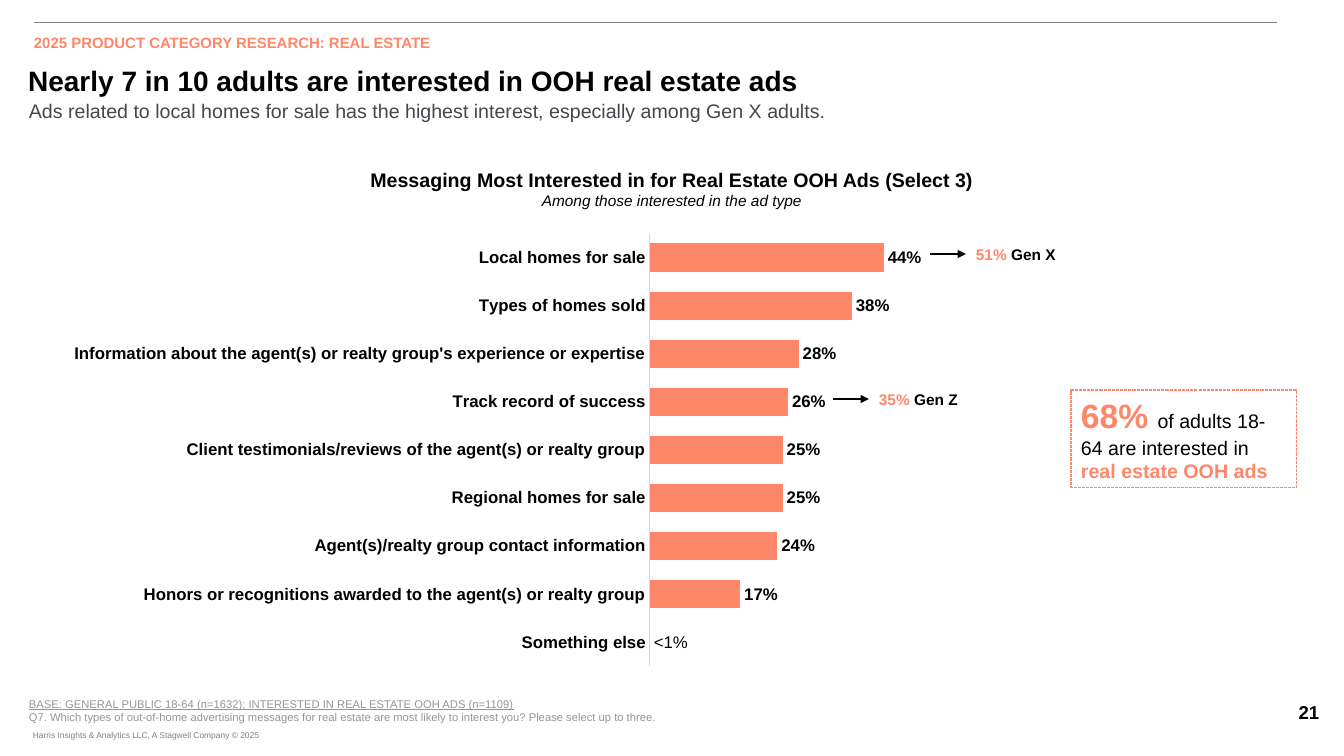
import pptx
import pptx.chart.data
import pptx.dml.color
import pptx.enum.chart
import pptx.enum.dml
import pptx.enum.shapes
import pptx.enum.text
import pptx.oxml
import pptx.oxml.ns
import pptx.util

RGB = pptx.dml.color.RGBColor
CORAL = RGB(0xFF, 0x87, 0x69)
BLACK = RGB(0, 0, 0)
SLATE = RGB(0x44, 0x47, 0x4E)
GRAY = RGB(0x80, 0x80, 0x80)
NOTE = RGB(0x93, 0x95, 0x98)
PALE = RGB(0xD9, 0xD9, 0xD9)
ALIGN = pptx.enum.text.PP_ALIGN
ANCHOR = pptx.enum.text.MSO_ANCHOR

STYLES = {
    "kicker": dict(size=10.7, color=CORAL, bold=True),
    "title": dict(size=20, color=BLACK, bold=True),
    "lead": dict(size=14, color=SLATE),
    "head": dict(size=14, color=BLACK, bold=True),
    "sub": dict(size=11, color=BLACK, italic=True),
    "base": dict(size=8, color=NOTE, underline=True),
    "query": dict(size=8, color=NOTE),
    "legal": dict(size=6, color=GRAY),
    "page": dict(size=13.3, color=BLACK, bold=True),
    "share": dict(size=11, color=CORAL, bold=True),
    "group": dict(size=11, color=BLACK, bold=True),
    "big": dict(size=24, color=CORAL, bold=True),
    "plain": dict(size=14, color=BLACK, bold=False),
    "strong": dict(size=14, color=CORAL, bold=True),
    "label": dict(size=12, color=BLACK, bold=True),
    "light": dict(size=12, color=BLACK, bold=False),
}

TITLE = [[("Nearly 7 in 10 adults are interested in OOH real estate ads", "title")]]
TEXTS = [
    ((24, 29, 672, 28), ALIGN.LEFT,
     [[("2025 PRODUCT CATEGORY RESEARCH: REAL ESTATE", "kicker")]]),
    ((19, 94, 1257, 41), ALIGN.LEFT,
     [[("Ads related to local homes for sale has the highest interest, "
        "especially among Gen X adults.", "lead")]]),
    ((294, 163, 756, 54), ALIGN.CENTER,
     [[("Messaging Most Interested in for Real Estate OOH Ads (Select 3)", "head")],
      [("Among those interested in the ad type", "sub")]]),
    ((19, 692, 1174, 38), ALIGN.LEFT,
     [[("BASE: GENERAL PUBLIC 18-64 (n=1632); "
        "INTERESTED IN REAL ESTATE OOH ADS (n=1109)", "base")],
      [("Q7. Which types of out-of-home advertising messages for real estate "
        "are most likely to interest you? Please select up to three.", "query")]]),
    ((23, 725, 260, 20), ALIGN.LEFT,
     [[("Harris Insights & Analytics LLC, A Stagwell Company © 2025", "legal")]]),
    ((1274, 696, 70, 33), ALIGN.CENTER, [[("21", "page")]]),
]
CALLS = [(930, 254, "51% ", "Gen X"), (833, 399, "35% ", "Gen Z")]
STAT = [[("68% ", "big"), ("of adults 18-64 are interested in ", "plain"),
         ("real estate OOH ads", "strong")]]
BARS = {
    "Local homes for sale": 0.44,
    "Types of homes sold": 0.38,
    "Information about the agent(s) or realty group's experience or expertise": 0.28,
    "Track record of success": 0.26,
    "Client testimonials/reviews of the agent(s) or realty group": 0.25,
    "Regional homes for sale": 0.25,
    "Agent(s)/realty group contact information": 0.24,
    "Honors or recognitions awarded to the agent(s) or realty group": 0.17,
    "Something else": 0,
}
PLOT = dict(layoutTarget="inner", xMode="edge", yMode="edge",
            x=0.512, y=0, w=0.488, h=1)


def px(*nums):
    return [round(n * 914400 / 100.8) for n in nums]


def style(font, name):
    font.name = "Arial"
    for key, val in STYLES[name].items():
        if key == "color":
            font.color.rgb = val
        else:
            setattr(font, key, pptx.util.Pt(val) if key == "size" else val)


def write(frame, paras, align=ALIGN.LEFT, anchor=ANCHOR.TOP):
    frame.word_wrap = True
    frame.auto_size = pptx.enum.text.MSO_AUTO_SIZE.NONE
    frame.vertical_anchor = anchor
    for num, runs in enumerate(paras):
        para = frame.add_paragraph() if num else frame.paragraphs[0]
        para.alignment = align
        for text, name in runs:
            run = para.add_run()
            run.text = text
            style(run.font, name)


def add_text(slide, box, align, paras):
    write(slide.shapes.add_textbox(*px(*box)).text_frame, paras, align)


def add_line(slide, ends, color, width, arrow=False):
    kind = pptx.enum.shapes.MSO_CONNECTOR.STRAIGHT
    link = slide.shapes.add_connector(kind, *px(*ends))
    link.line.color.rgb = color
    link.line.width = pptx.util.Pt(width)
    props = link._element.spPr
    if arrow:
        tail = pptx.oxml.ns.qn("a:tailEnd")
        props.find(pptx.oxml.ns.qn("a:ln")).append(
            props.makeelement(tail, {"type": "triangle"}))
    props.append(props.makeelement(pptx.oxml.ns.qn("a:effectLst"), {}))


def add_stat(slide):
    kind = pptx.enum.shapes.MSO_SHAPE.RECTANGLE
    card = slide.shapes.add_shape(kind, *px(1071, 390, 226, 98))
    card.shadow.inherit = False
    card.fill.background()
    card.line.color.rgb = CORAL
    card.line.width = pptx.util.Pt(0.75)
    card.line.dash_style = pptx.enum.dml.MSO_LINE.SQUARE_DOT
    write(card.text_frame, STAT, anchor=ANCHOR.MIDDLE)


def set_plot(chart):
    area = chart._chartSpace.chart.plotArea
    for old in area.findall(pptx.oxml.ns.qn("c:layout")):
        area.remove(old)
    rows = "".join(f'<c:{key} val="{val}"/>' for key, val in PLOT.items())
    space = pptx.oxml.ns.nsdecls("c")
    area.insert(0, pptx.oxml.parse_xml(
        f"<c:layout {space}><c:manualLayout>{rows}</c:manualLayout></c:layout>"))


def add_bars(slide):
    kinds = pptx.enum.chart
    data = pptx.chart.data.CategoryChartData(number_format="0%")
    data.categories = list(BARS)
    data.add_series("Series 1", list(BARS.values()))
    chart = slide.shapes.add_chart(
        kinds.XL_CHART_TYPE.BAR_CLUSTERED, *px(36, 233, 1199, 434), data).chart
    chart.has_legend = chart.has_title = False
    style(chart.font, "label")
    cats, vals = chart.category_axis, chart.value_axis
    cats.reverse_order = True
    cats.major_tick_mark = kinds.XL_TICK_MARK.NONE
    cats.format.line.color.rgb = PALE
    cats.format.line.width = pptx.util.Pt(0.75)
    style(cats.tick_labels.font, "label")
    limits = dict(minimum_scale=0, maximum_scale=1.1,
                  has_major_gridlines=False, visible=False)
    for key, val in limits.items():
        setattr(vals, key, val)
    plot = chart.plots[0]
    looks = dict(gap_width=70, overlap=-15, vary_by_categories=False)
    for key, val in looks.items():
        setattr(plot, key, val)
    bars = plot.series[0]
    bars.format.fill.solid()
    bars.format.fill.fore_color.rgb = CORAL
    tags = bars.data_labels
    shows = dict(show_value=True, number_format="0%", number_format_is_linked=False,
                 position=kinds.XL_LABEL_POSITION.OUTSIDE_END)
    for key, val in shows.items():
        setattr(tags, key, val)
    style(tags.font, "label")
    last = bars.points[len(BARS) - 1].data_label
    run = last.text_frame.paragraphs[0].add_run()
    run.text = "<1%"
    style(run.font, "light")
    last.position = kinds.XL_LABEL_POSITION.OUTSIDE_END
    set_plot(chart)


def main():
    """Build the real estate advertising slide."""
    deck = pptx.Presentation()
    deck.slide_width, deck.slide_height = px(1344, 756)
    slide = deck.slides.add_slide(deck.slide_layouts[5])
    title = slide.shapes.title
    title.left, title.top, title.width, title.height = px(18, 58, 1264, 39)
    write(title.text_frame, TITLE)
    add_line(slide, (34, 22, 1277, 22), GRAY, 0.5)
    for box, align, paras in TEXTS:
        add_text(slide, box, align, paras)
    add_bars(slide)
    for left, mid, share, group in CALLS:
        add_line(slide, (left, mid, left + 36, mid), BLACK, 2, True)
        add_text(slide, (left + 36, mid - 14, 196, 29), ALIGN.LEFT,
                 [[(share, "share"), (group, "group")]])
    add_stat(slide)
    deck.save("out.pptx")


if __name__ == "__main__":
    main()
